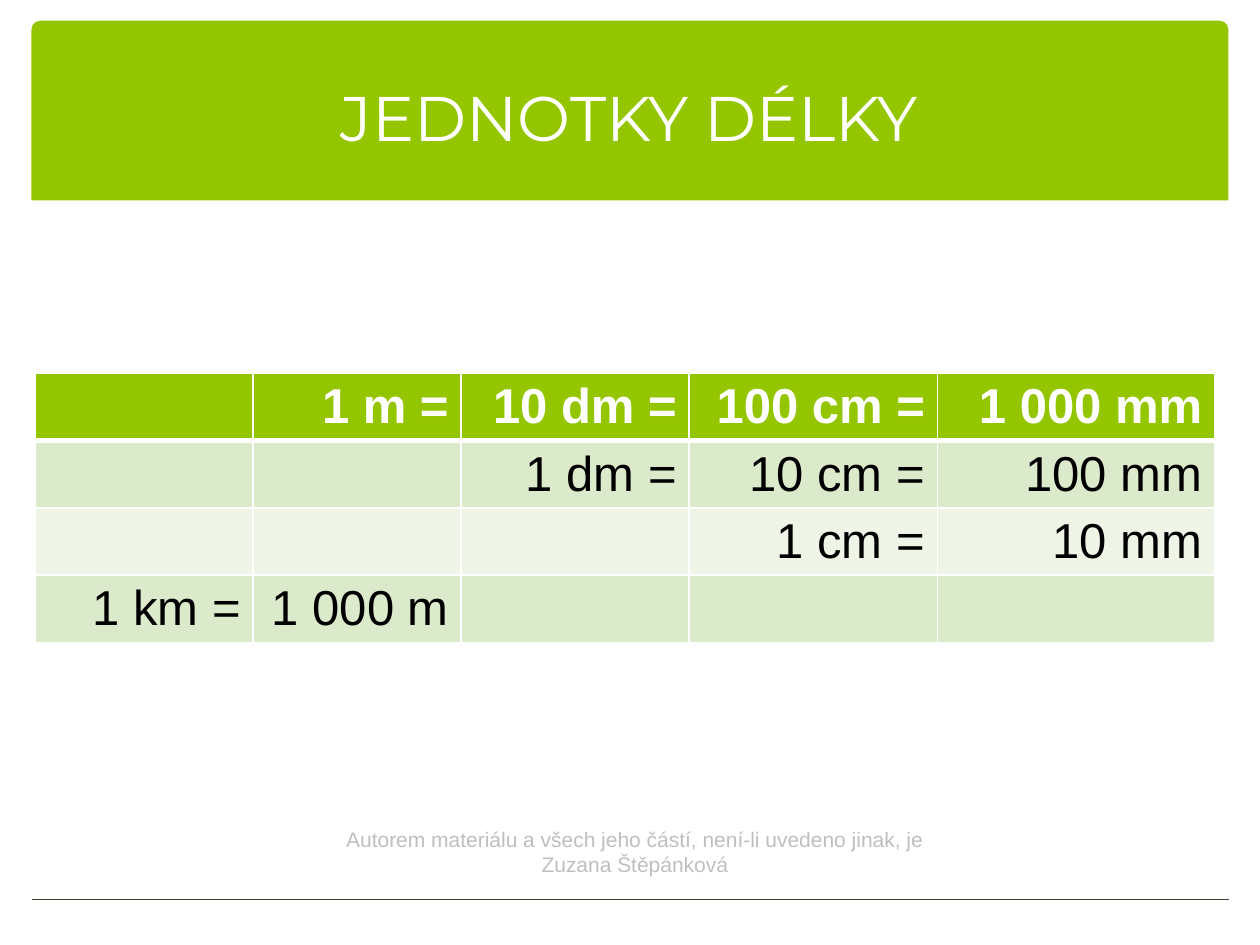
from lxml import etree
from pptx import Presentation
from pptx import util as u
from pptx.dml import color
from pptx.enum import shapes, text
from pptx.oxml import ns

WIDTH, HEIGHT = 10, 7.5
GREEN, WHITE, BLACK, GREY, DARK = "94C600", "FFFFFF", "000000", "BFBFBF", "3E3D2D"
BANDS = ("DCEACC", "EEF5E7")
COLUMNS = (1.73, 1.65, 1.81, 1.97, 2.2)
ROW_HEIGHT = 0.53
UNITS = (
    ("", "1 m =", "10 dm =", "100 cm =", "1 000 mm"),
    ("", "", "1 dm =", "10 cm =", "100 mm"),
    ("", "", "", "1 cm =", "10 mm"),
    ("1 km =", "1 000 m", "", "", ""),
)


def rgb(value):
    """Turn a hex string into a colour."""
    return color.RGBColor.from_string(value)


def box(left, top, width, height):
    """Turn shares of the slide's size into lengths."""
    return [u.Inches(share * side) for share, side in
            zip((left, top, width, height), (WIDTH, HEIGHT) * 2)]


def paint(part, value):
    """Fill a shape or cell with a plain colour."""
    part.fill.solid()
    part.fill.fore_color.rgb = rgb(value)


def write(frame, wording, align, ink, **formats):
    """Write one formatted paragraph into a text frame."""
    frame.word_wrap = True
    paragraph = frame.paragraphs[0]
    paragraph.alignment = align
    font = paragraph.font
    if wording:
        run = paragraph.add_run()
        run.text = wording
        font = run.font
    for name, value in formats.items():
        setattr(font, name, value)
    font.color.rgb = rgb(ink)


def add_band(slide):
    """Draw the green band behind the title."""
    band = slide.shapes.add_shape(shapes.MSO_SHAPE.ROUND_2_SAME_RECTANGLE,
                                  *box(0.025, 0.022, 0.95, 0.19))
    band.adjustments[0], band.adjustments[1] = 0.049, 0
    band.shadow.inherit = False
    band.line.fill.background()
    paint(band, GREEN)


def add_rule(slide):
    """Draw the thin line near the bottom edge."""
    left, top, width, _ = box(0.025, 0.952, 0.95, 0)
    rule = slide.shapes.add_connector(shapes.MSO_CONNECTOR.STRAIGHT,
                                      left, top, left + width, top)
    rule.line.color.rgb = rgb(DARK)
    rule.line.width = u.Pt(1)
    etree.SubElement(rule.element.spPr, ns.qn("a:effectLst"))


def add_title(slide, wording):
    """Place the title placeholder on top of the band."""
    title = slide.shapes.title
    title.left, title.top, title.width, title.height = box(0.033, 0.04, 0.933, 0.167)
    title.text_frame.vertical_anchor = text.MSO_ANCHOR.MIDDLE
    write(title.text_frame, wording, text.PP_ALIGN.CENTER, WHITE,
          size=u.Pt(36), name="Montserrat")
    slide.shapes.element.append(title.element)


def add_borders(cell, widths):
    """Give a cell white borders of the given widths in points."""
    properties = cell._tc.get_or_add_tcPr()
    for side, width in widths.items():
        border = etree.SubElement(properties, ns.qn(f"a:ln{side}"), w=str(u.Pt(width)))
        solid = etree.SubElement(border, ns.qn("a:solidFill"))
        etree.SubElement(solid, ns.qn("a:srgbClr"), val=WHITE)


def add_units(slide):
    """Build the table of length units."""
    left, top, width, _ = box(0.028, 0.395, 0.937, 0)
    units = slide.shapes.add_table(len(UNITS), len(COLUMNS), left, top, width,
                                   u.Inches(ROW_HEIGHT * len(UNITS))).table
    for column, size in zip(units.columns, COLUMNS):
        column.width = u.Inches(size)
    for r, values in enumerate(UNITS):
        header = r == 0
        for c, value in enumerate(values):
            cell = units.cell(r, c)
            add_borders(cell, {"L": 1, "R": 1, "T": 3 if r == 1 else 1,
                               "B": 3 if header else 1})
            paint(cell, GREEN if header else BANDS[(r - 1) % 2])
            write(cell.text_frame, value, text.PP_ALIGN.RIGHT,
                  WHITE if header else BLACK,
                  size=u.Pt(28), name="Arial", bold=header)


def add_credit(slide, wording):
    """Write the author's line under the table."""
    credit = slide.shapes.add_textbox(*box(0.254, 0.868, 0.5, 0.067))
    write(credit.text_frame, wording, text.PP_ALIGN.CENTER, GREY,
          size=u.Pt(12), name="Arial")


def main():
    """Build and save the slide."""
    deck = Presentation()
    deck.slide_width, deck.slide_height = u.Inches(WIDTH), u.Inches(HEIGHT)
    slide = deck.slides.add_slide(deck.slide_layouts[5])
    add_band(slide)
    add_rule(slide)
    add_title(slide, "JEDNOTKY DÉLKY")
    add_units(slide)
    add_credit(slide, "Autorem materiálu a všech jeho částí, "
                      "není-li uvedeno jinak, je Zuzana Štěpánková")
    deck.save("out.pptx")


if __name__ == "__main__":
    main()
